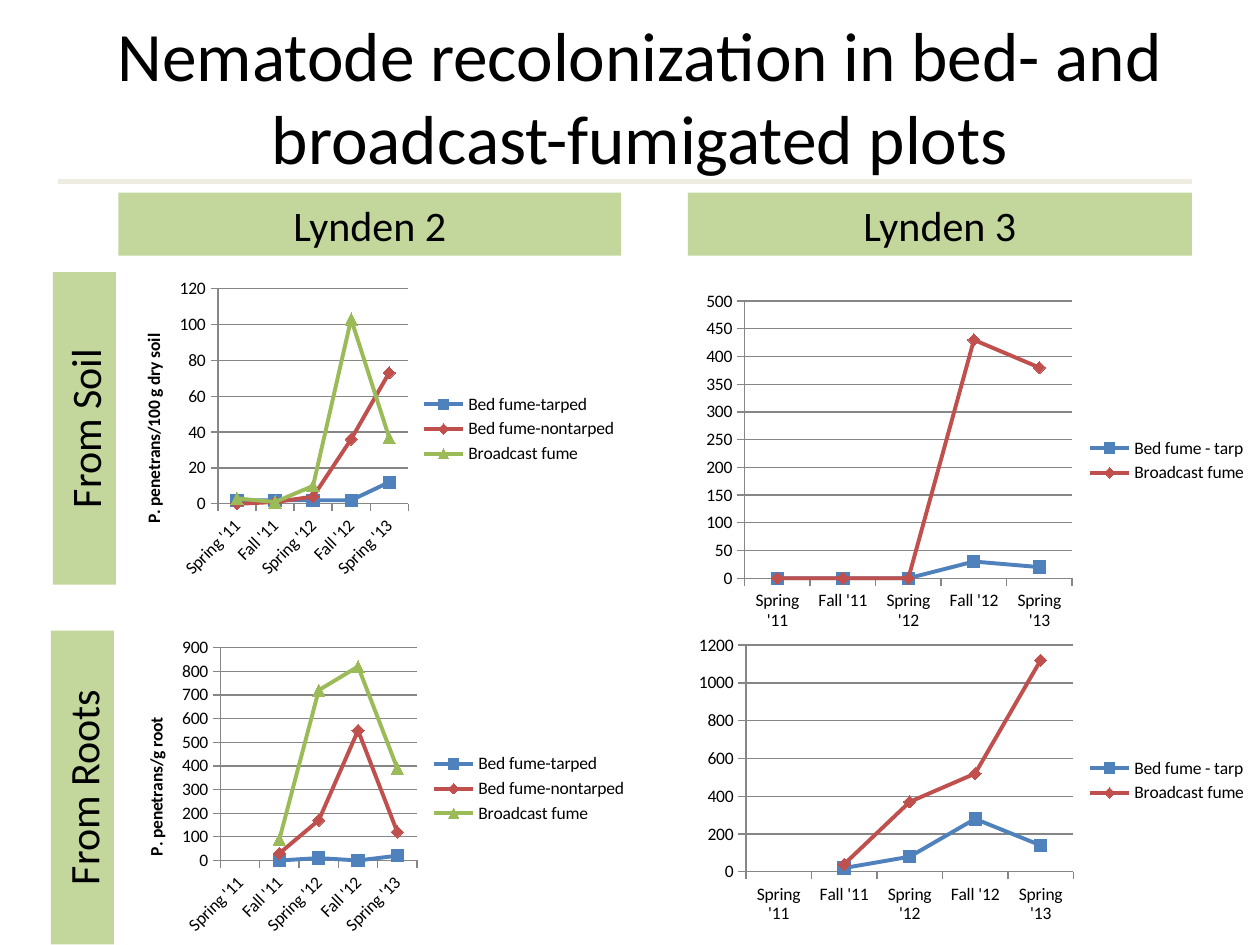
from dataclasses import dataclass
from typing import Optional

from lxml import etree
from pptx import Presentation, util as u
from pptx.chart.data import CategoryChartData
from pptx.dml.color import RGBColor
from pptx.enum import chart as ch, shapes, text
from pptx.oxml.ns import qn

EMU_PER_PX = 9144  # 100 px to the inch


@dataclass(frozen=True)
class Theme:
    font: str = "Calibri"
    ink: str = "000000"
    band: str = "C3D69B"
    rule: str = "EEECE1"
    grid: str = "868686"
    series: tuple = ("4F81BD", "C0504D", "9BBB59")
    title_pt: float = 39.6
    band_pt: float = 24
    chart_pt: float = 10


@dataclass(frozen=True)
class Box:
    x: int
    y: int
    w: int
    h: int

    def emu(self) -> list:
        return [px(n) for n in (self.x, self.y, self.w, self.h)]


@dataclass(frozen=True)
class Band:
    label: str
    box: Box
    rotation: int = 0


@dataclass(frozen=True)
class Panel:
    box: Box
    plot: Box  # inner plot area, in slide coordinates
    top: int
    step: int
    series: dict
    axis_title: Optional[str] = None


THEME = Theme()
MARKERS = (ch.XL_MARKER_STYLE.SQUARE, ch.XL_MARKER_STYLE.DIAMOND, ch.XL_MARKER_STYLE.TRIANGLE)
SEASONS = ("Spring '11", "Fall '11", "Spring '12", "Fall '12", "Spring '13")

BANDS = (
    Band("Lynden 3", Box(546, 153, 400, 50)),
    Band("Lynden 2", Box(94, 153, 399, 50)),
    Band("From Soil", Box(-57, 315, 248, 50), 270),
    Band("From Roots", Box(-59, 600, 249, 50), 270),
)

PANELS = (
    Panel(Box(552, 225, 448, 281), Box(591, 239, 260, 220), 500, 50, {
        "Bed fume - tarp": (0, 0, 0, 30, 20),
        "Broadcast fume": (0, 0, 0, 430, 380),
    }),
    Panel(Box(546, 500, 454, 239), Box(592, 512, 260, 180), 1200, 200, {
        "Bed fume - tarp": (None, 20, 80, 280, 140),
        "Broadcast fume": (None, 40, 370, 520, 1120),
    }),
    Panel(Box(95, 502, 413, 248), Box(175, 514, 156, 169), 900, 100, {
        "Bed fume-tarped": (None, 0, 10, 0, 20),
        "Bed fume-nontarped": (None, 30, 170, 550, 120),
        "Broadcast fume": (None, 90, 720, 820, 390),
    }, "P. penetrans/g root"),
    Panel(Box(93, 215, 407, 251), Box(173, 229, 151, 171), 120, 20, {
        "Bed fume-tarped": (2, 2, 2, 2, 12),
        "Bed fume-nontarped": (0, 1, 4, 36, 73),
        "Broadcast fume": (3, 1, 10, 103, 37),
    }, "P. penetrans/100 g dry soil"),
)


def px(n: int) -> int:
    return u.Emu(n * EMU_PER_PX)


def rgb(code: str) -> RGBColor:
    return RGBColor.from_string(code)


def style_font(font, size: float, bold: bool = False) -> None:
    font.name, font.size, font.bold = THEME.font, u.Pt(size), bold
    font.color.rgb = rgb(THEME.ink)


def style_line(line, color: str, width: float) -> None:
    line.color.rgb = rgb(color)
    line.width = u.Pt(width)


def add_run(tf, words: str, size: float, bold: bool = False) -> None:
    p = tf.paragraphs[0]
    p.alignment = text.PP_ALIGN.CENTER
    r = p.add_run()
    r.text = words
    style_font(r.font, size, bold)


def add_title(s, words: str, box: Box) -> None:
    tf = s.shapes.add_textbox(*box.emu()).text_frame
    tf.word_wrap = True
    tf.vertical_anchor = text.MSO_ANCHOR.MIDDLE
    add_run(tf, words, THEME.title_pt)


def add_band(s, band: Band) -> None:
    sp = s.shapes.add_shape(shapes.MSO_SHAPE.RECTANGLE, *band.box.emu())
    sp.rotation = band.rotation
    sp.shadow.inherit = False
    sp.fill.solid()
    sp.fill.fore_color.rgb = rgb(THEME.band)
    sp.line.fill.background()
    sp.text_frame.word_wrap = True
    add_run(sp.text_frame, band.label, THEME.band_pt)


def add_rule(s, x1: int, x2: int, y: int) -> None:
    line = s.shapes.add_connector(shapes.MSO_CONNECTOR.STRAIGHT, px(x1), px(y), px(x2), px(y))
    style_line(line.line, THEME.rule, 3)
    etree.SubElement(line.element.spPr, qn("a:effectLst"))


def place_plot(chart, panel: Panel) -> None:
    """Fix the inner plot area as fractions of the chart frame."""
    area = chart.element.xpath("c:chart/c:plotArea")[0]
    for old in area.findall(qn("c:layout")):
        area.remove(old)
    layout = etree.Element(qn("c:layout"))
    area.insert(0, layout)
    manual = etree.SubElement(layout, qn("c:manualLayout"))
    box, plot = panel.box, panel.plot
    settings = {
        "layoutTarget": "inner", "xMode": "edge", "yMode": "edge",
        "x": (plot.x - box.x) / box.w, "y": (plot.y - box.y) / box.h,
        "w": plot.w / box.w, "h": plot.h / box.h,
    }
    for tag, value in settings.items():
        etree.SubElement(manual, qn(f"c:{tag}")).set("val", str(value))


def turn_text(chart, path: str, degrees: int) -> None:
    body = chart.element.xpath(f"{path}//a:bodyPr")[0]
    body.set("rot", str(degrees * 60000))
    body.set("vert", "horz")


def style_axes(chart, panel: Panel) -> None:
    cat, val = chart.category_axis, chart.value_axis
    for axis in (cat, val):
        axis.major_tick_mark = ch.XL_TICK_MARK.OUTSIDE
        axis.minor_tick_mark = ch.XL_TICK_MARK.NONE
        style_line(axis.format.line, THEME.grid, 0.75)
        style_font(axis.tick_labels.font, THEME.chart_pt)
    val.minimum_scale, val.maximum_scale, val.major_unit = 0, panel.top, panel.step
    val.has_major_gridlines = True
    style_line(val.major_gridlines.format.line, THEME.grid, 0.75)
    val.tick_labels.number_format = "0"
    val.tick_labels.number_format_is_linked = False
    if panel.axis_title:
        add_run(val.axis_title.text_frame, panel.axis_title, THEME.chart_pt, bold=True)
        turn_text(chart, ".//c:valAx/c:title", -90)
        turn_text(chart, ".//c:catAx/c:txPr", -45)


def add_panel(s, panel: Panel) -> None:
    data = CategoryChartData(number_format="0")
    data.categories = SEASONS
    for name, values in panel.series.items():
        data.add_series(name, values)
    chart = s.shapes.add_chart(ch.XL_CHART_TYPE.LINE_MARKERS, *panel.box.emu(), data).chart
    style_font(chart.font, THEME.chart_pt)
    chart.has_title = False
    chart.has_legend = True
    chart.legend.position = ch.XL_LEGEND_POSITION.RIGHT
    chart.legend.include_in_layout = False
    style_font(chart.legend.font, THEME.chart_pt)
    chart.plots[0].vary_by_categories = False
    for series, color, marker in zip(chart.plots[0].series, THEME.series, MARKERS):
        series.smooth = False
        style_line(series.format.line, color, 2.25)
        series.marker.style, series.marker.size = marker, 7
        series.marker.format.fill.solid()
        series.marker.format.fill.fore_color.rgb = rgb(color)
        style_line(series.marker.format.line, color, 0.75)
    style_axes(chart, panel)
    place_plot(chart, panel)


def main() -> None:
    prs = Presentation()
    prs.slide_width, prs.slide_height = px(1000), px(750)
    s = prs.slides.add_slide(prs.slide_layouts[6])
    add_title(s, "Nematode recolonization in bed- and broadcast-fumigated plots", Box(58, 13, 900, 125))
    for band in BANDS:
        add_band(s, band)
    add_rule(s, 46, 946, 144)
    for panel in PANELS:
        add_panel(s, panel)
    prs.save("out.pptx")


if __name__ == "__main__":
    main()
